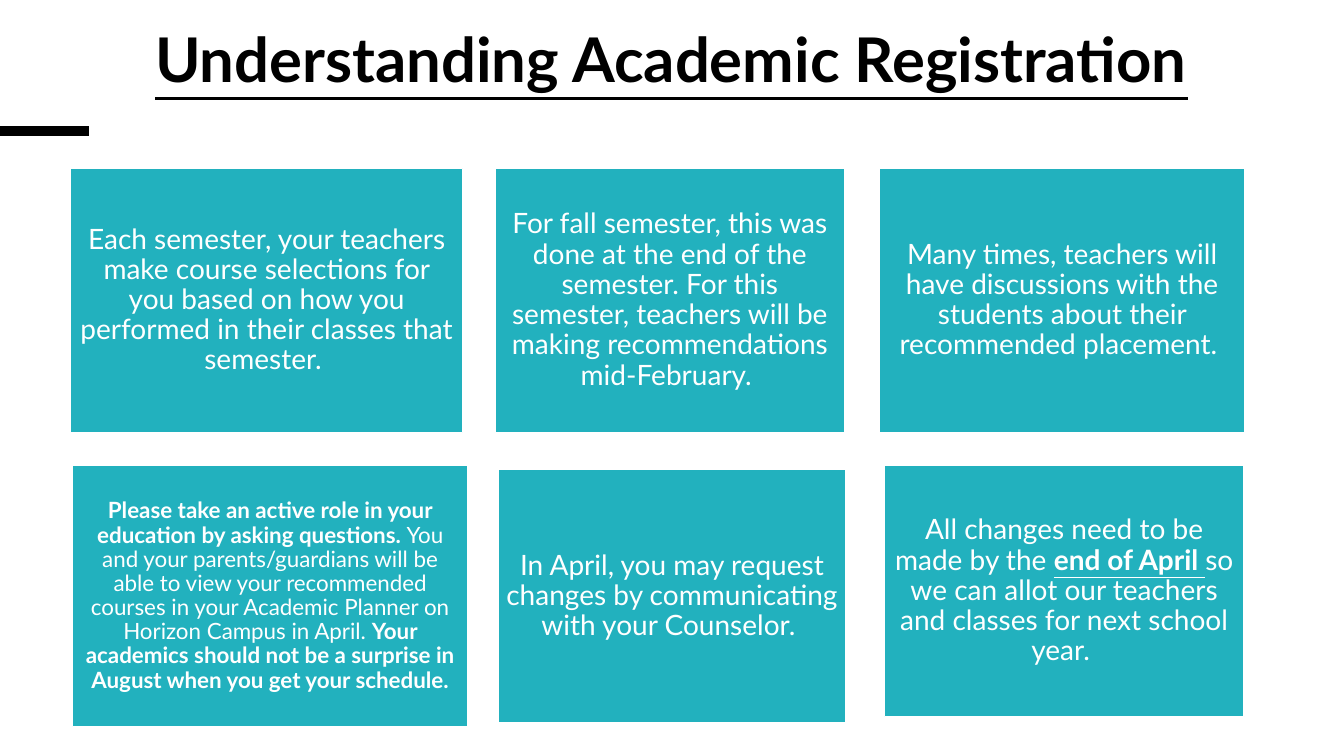
from lxml.etree import SubElement
from pptx import Presentation
from pptx.dml.color import RGBColor
from pptx.enum.shapes import MSO_CONNECTOR, MSO_SHAPE
from pptx.enum.text import MSO_ANCHOR, PP_ALIGN
from pptx.oxml.ns import qn
from pptx.util import Emu, Pt

PX = 9144  # 100 px to the inch
BLACK = RGBColor(0x00, 0x00, 0x00)
WHITE = RGBColor(0xFF, 0xFF, 0xFF)
TEAL = RGBColor(0x22, 0xB1, 0xBE)
FONT = "Lato"

PLAIN, BOLD, KEY = "plain", "bold", "key"

# box (left, top, width, height), text size, inset, runs
CARDS = [
    ((70, 167, 389, 262), 20, 8, [
        ("Each semester, your teachers make course selections for you based on "
         "how you performed in their classes that semester. ", PLAIN)]),
    ((491, 167, 347, 262), 20, 8, [
        ("For fall semester, this was done at the end of the semester. For this "
         "semester, teachers will be making recommendations mid-February. ", PLAIN)]),
    ((872, 167, 363, 262), 20, 8, [
        ("Many times, teachers will have discussions with the students about "
         "their recommended placement. ", PLAIN)]),
    ((72, 462, 392, 259), 16, 7, [
        ("Please take an active role in your education by asking questions. ", BOLD),
        ("You and your parents/guardians will be able to view your recommended "
         "courses in your Academic Planner on Horizon Campus in April. ", PLAIN),
        ("Your academics should not be a surprise in August when you get your "
         "schedule.", BOLD)]),
    ((494, 466, 345, 251), 20, 8, [
        ("In April, you may request changes by communicating with your "
         "Counselor. ", PLAIN)]),
    ((877, 462, 357, 249), 20, 8, [
        ("All changes need to be made by the ", PLAIN),
        ("end of April ", KEY),
        ("so we can allot our teachers and classes for next school year. ", PLAIN)]),
]


def px(*lengths):
    return [Emu(length * PX) for length in lengths]


def style_paragraph(paragraph, size, color, line_spacing):
    paragraph.alignment = PP_ALIGN.CENTER
    paragraph.line_spacing = line_spacing
    paragraph.font.name = FONT
    paragraph.font.size = Pt(size)
    paragraph.font.color.rgb = color


def add_title(slide, box, text):
    frame = slide.shapes.add_textbox(*px(*box)).text_frame
    frame.word_wrap = True
    heading = frame.paragraphs[0]
    heading.text = text
    style_paragraph(heading, 44, BLACK, 0.85)
    heading.font.bold = True
    heading.font.underline = True


def add_accent(slide, left, y, width):
    """Draw the thick rule at the slide's left edge."""
    accent = slide.shapes.add_connector(
        MSO_CONNECTOR.STRAIGHT, *px(left, y, left + width, y))
    accent.line.color.rgb = BLACK
    accent.line.width = Pt(6.75)
    SubElement(accent._element.spPr, qn("a:effectLst"))


def add_card(slide, box, size, inset, runs):
    card = slide.shapes.add_shape(MSO_SHAPE.RECTANGLE, *px(*box))
    card.shadow.inherit = False
    card.fill.solid()
    card.fill.fore_color.rgb = TEAL
    card.line.color.rgb = WHITE
    card.line.width = Pt(1)

    frame = card.text_frame
    frame.word_wrap = True
    frame.vertical_anchor = MSO_ANCHOR.MIDDLE
    (frame.margin_left, frame.margin_top,
     frame.margin_right, frame.margin_bottom) = px(*[inset] * 4)
    message = frame.paragraphs[0]
    style_paragraph(message, size, WHITE, 0.9)
    for text, emphasis in runs:
        run = message.add_run()
        run.text = text
        if emphasis != PLAIN:
            run.font.bold = True
        if emphasis == KEY:
            run.font.underline = True


def main():
    deck = Presentation()
    deck.slide_width, deck.slide_height = px(1333, 750)
    slide = deck.slides.add_slide(deck.slide_layouts[6])
    add_accent(slide, 0, 130, 88)
    add_title(slide, (83, 27, 1166, 145), "Understanding Academic Registration")
    for card in CARDS:
        add_card(slide, *card)
    deck.save("out.pptx")


if __name__ == "__main__":
    main()
